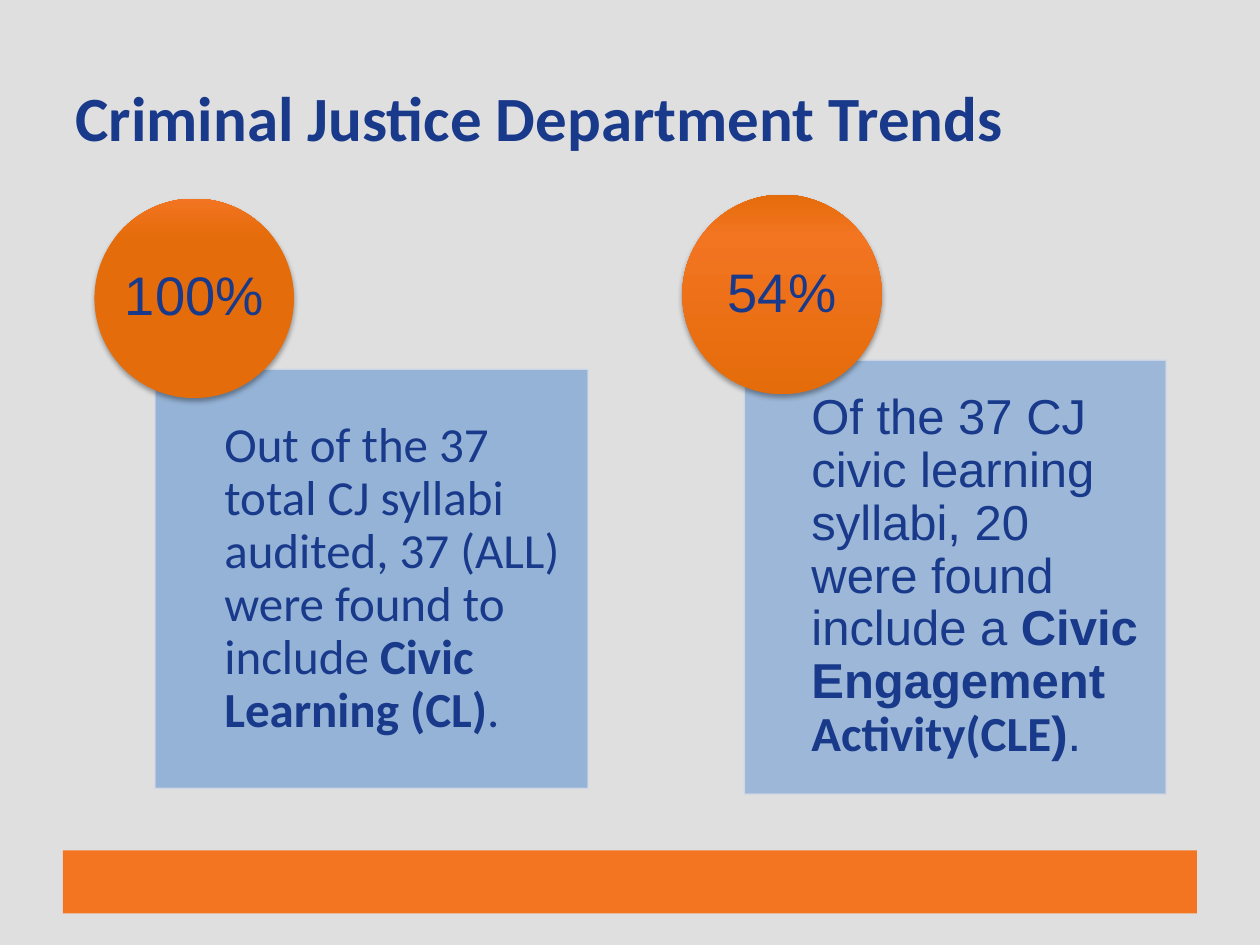
from dataclasses import dataclass

from pptx import Presentation
from pptx.dml.color import RGBColor
from pptx.enum import shapes, text
from pptx.oxml import parse_xml
from pptx.oxml.ns import nsdecls
from pptx.util import Pt

COLORS = {
    "background": "DFDFDF",
    "navy": "19398A",
    "orange": "F37421",
    "dark_orange": "E46C0A",
    "panel": "95B3D7",
    "panel_line": "D0D8E8",
    "shadow": "000000",
}


@dataclass
class Box:
    left: float
    top: float
    width: float
    height: float

    def lengths(self) -> tuple:
        return Pt(self.left), Pt(self.top), Pt(self.width), Pt(self.height)


@dataclass
class Run:
    text: str
    font: str
    size: float
    bold: bool = False


@dataclass
class Trend:
    circle: Box
    panel: Box
    text_left: float
    panel_opacity: int
    gradient: list  # (position in percent, colour name), from the bottom up
    percentage: str
    runs: list


def rgb(name: str) -> RGBColor:
    return RGBColor.from_string(COLORS[name])


def add_runs(paragraph, runs: list) -> None:
    for item in runs:
        run = paragraph.add_run()
        run.text = item.text
        run.font.name = item.font
        run.font.size = Pt(item.size)
        run.font.bold = item.bold
        run.font.color.rgb = rgb("navy")


def add_text(slide, box: Box, runs: list, inset: float, alignment) -> None:
    frame = slide.shapes.add_textbox(*box.lengths()).text_frame
    frame.word_wrap = True
    frame.vertical_anchor = text.MSO_ANCHOR.MIDDLE
    frame.margin_left = 0
    frame.margin_top = frame.margin_right = frame.margin_bottom = Pt(inset)
    paragraph = frame.paragraphs[0]
    paragraph.alignment = alignment
    paragraph.line_spacing = 0.9
    add_runs(paragraph, runs)


def add_rectangle(slide, box: Box, color: str):
    shape = slide.shapes.add_shape(shapes.MSO_SHAPE.RECTANGLE, *box.lengths())
    shape.shadow.inherit = False
    shape.fill.solid()
    shape.fill.fore_color.rgb = rgb(color)
    shape.line.fill.background()
    return shape


def set_opacity(fill, percent: int) -> None:
    color = fill._xPr.find(".//{*}solidFill/{*}srgbClr")
    color.append(parse_xml(f'<a:alpha {nsdecls("a")} val="{percent * 1000}"/>'))


def add_panel(slide, trend: Trend) -> None:
    panel = add_rectangle(slide, trend.panel, "panel")
    if trend.panel_opacity < 100:
        set_opacity(panel.fill, trend.panel_opacity)
    panel.line.color.rgb = rgb("panel_line")
    panel.line.width = Pt(0.75)
    set_opacity(panel.line.fill, 90)
    box = trend.panel
    text_width = box.left + box.width - trend.text_left
    text_box = Box(trend.text_left, box.top, text_width, box.height)
    add_text(slide, text_box, trend.runs, 16, text.PP_ALIGN.LEFT)


def add_circle(slide, trend: Trend) -> None:
    circle = slide.shapes.add_shape(shapes.MSO_SHAPE.OVAL, *trend.circle.lengths())
    circle.line.fill.background()
    circle.shadow.inherit = False
    properties = circle._element.spPr

    # Vertical gradient, placed right after the geometry
    stops = "".join(
        f'<a:gs pos="{position * 1000}"><a:srgbClr val="{COLORS[name]}"/></a:gs>'
        for position, name in trend.gradient
    )
    properties.insert(2, parse_xml(
        f'<a:gradFill {nsdecls("a")} rotWithShape="1"><a:gsLst>{stops}</a:gsLst>'
        '<a:lin ang="16200000" scaled="0"/></a:gradFill>'
    ))

    # Soft shadow below the circle
    properties.find("{*}effectLst").append(parse_xml(
        f'<a:outerShdw {nsdecls("a")} blurRad="{Pt(3.1)}" dist="{Pt(1.8)}" '
        f'dir="5400000" rotWithShape="0"><a:srgbClr val="{COLORS["shadow"]}">'
        '<a:alpha val="35000"/></a:srgbClr></a:outerShdw>'
    ))

    box, gap = trend.circle, 17
    inner = Box(box.left + gap, box.top + gap, box.width - 2 * gap, box.height - 2 * gap)
    add_text(slide, inner, [Run(trend.percentage, "Arial", 31)], 0, text.PP_ALIGN.CENTER)


TRENDS = [
    Trend(
        Box(54, 113.5, 114, 114), Box(88.6, 211, 247.4, 239.5), 128.2, 100,
        [(1, "dark_orange"), (80, "dark_orange"), (100, "orange")],
        "100%",
        [
            Run("Out of the 37 total CJ syllabi audited, 37 (ALL) were found to include ",
                "Calibri", 28),
            Run("Civic Learning (CL)", "Calibri", 28, True),
            Run(".", "Calibri", 28),
        ],
    ),
    Trend(
        Box(389.9, 111.3, 114, 114), Box(425.4, 205.8, 241, 248), 463.7, 90,
        [(0, "dark_orange"), (80, "orange"), (100, "dark_orange")],
        "54%",
        [
            Run("Of the 37 CJ civic learning syllabi, 20 were found include a ", "Arial", 28),
            Run("Civic Engagement ", "Arial", 28, True),
            Run("Activity(CLE", "Calibri", 28, True),
            Run(")", "Arial", 28, True),
            Run(".", "Arial", 28),
        ],
    ),
]


def main() -> None:
    presentation = Presentation()
    presentation.slide_width, presentation.slide_height = Pt(720), Pt(540)
    slide = presentation.slides.add_slide(presentation.slide_layouts[5])
    slide.background.fill.solid()
    slide.background.fill.fore_color.rgb = rgb("background")

    # Title
    title = slide.shapes.title
    title.left, title.top, title.width, title.height = Box(36, 21.6, 648, 90).lengths()
    frame = title.text_frame
    frame.auto_size = text.MSO_AUTO_SIZE.NONE
    frame.vertical_anchor = text.MSO_ANCHOR.MIDDLE
    frame.paragraphs[0].alignment = text.PP_ALIGN.LEFT
    add_runs(frame.paragraphs[0],
             [Run("Criminal Justice Department Trends", "Calibri", 36, True)])

    # Bottom bar
    add_rectangle(slide, Box(36, 486, 648, 36), "orange")

    # Panels with their percentage circles
    for trend in TRENDS:
        add_panel(slide, trend)
        add_circle(slide, trend)

    presentation.save("out.pptx")


if __name__ == "__main__":
    main()
